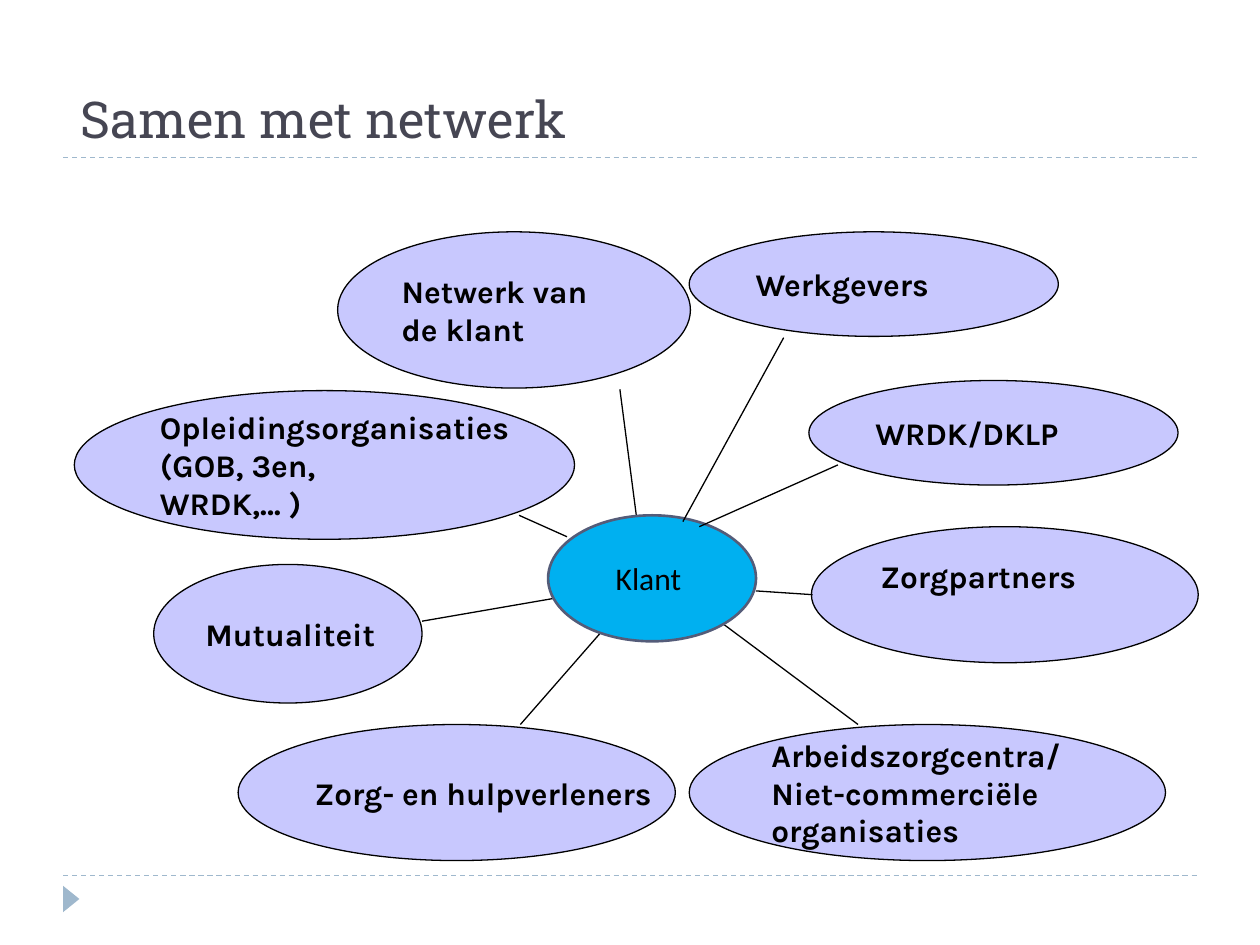
from lxml.etree import SubElement
from pptx import Presentation
from pptx.dml.color import RGBColor
from pptx.enum.dml import MSO_LINE
from pptx.enum.shapes import MSO_CONNECTOR, MSO_SHAPE
from pptx.enum.text import MSO_ANCHOR, PP_ALIGN
from pptx.oxml.ns import qn
from pptx.util import Inches, Pt

BLACK = RGBColor(0x00, 0x00, 0x00)
TITLE_GREY = RGBColor(0x46, 0x46, 0x53)
MIST = RGBColor(0x9F, 0xB8, 0xCD)
LILAC = RGBColor(0xC8, 0xC8, 0xFE)
CYAN = RGBColor(0x00, 0xB0, 0xF0)
SLATE = RGBColor(0x54, 0x5C, 0x79)

TITLE = "Samen met netwerk"
CLIENT = ("Klant ", (4.35, 4.09, 1.65, 1))
# text, (left, top, width, height), bottom inset
PARTNERS = [
    ("WRDK/DKLP", (6.42, 3.02, 2.93, 0.83), 0.05),
    ("Zorg- en hulpverleners", (1.89, 5.75, 3.47, 1.08), 0.05),
    ("Zorgpartners", (6.44, 4.18, 3.07, 1.08), 0.35),
    ("Arbeidszorgcentra/\nNiet-commerciële\norganisaties", (5.47, 5.75, 3.78, 1.08), 0.05),
    ("Opleidingsorganisaties\n(GOB, 3en,\nWRDK,… )", (0.59, 3.1, 3.97, 1.18), 0.05),
    ("Mutualiteit", (1.22, 4.48, 2.13, 1.1), 0.05),
    ("Netwerk van\nde klant", (2.68, 1.84, 2.8, 1.24), 0.05),
    ("Werkgevers", (5.47, 1.84, 2.93, 0.83), 0.05),
]
# x and y of both ends
LINKS_BEHIND_CLIENT = [
    (4.12, 4.09, 4.5, 4.26),
    (5.05, 4.09, 4.92, 3.09),
    (5.71, 4.93, 6.81, 5.75),
    (4.76, 5.03, 4.13, 5.75),
    (6, 4.69, 6.45, 4.72),
    (3.35, 4.93, 4.45, 4.74),
]
LINKS_OVER_CLIENT = [(5.55, 4.18, 6.65, 3.69), (5.42, 4.14, 6.22, 2.68)]
RULE_TOPS = (6.95, 1.25)


def inches(values):
    return [Inches(value) for value in values]


def write(shape, text, font_name, size, color, bold=False, align=PP_ALIGN.LEFT):
    frame = shape.text_frame
    frame.text = text
    for para in frame.paragraphs:
        para.alignment = align
        font = para.font
        font.name, font.size, font.bold = font_name, Pt(size), bold
        font.color.rgb = color
    return frame


def add_line(page, ends, color=BLACK, dash=None):
    line = page.shapes.add_connector(MSO_CONNECTOR.STRAIGHT, *inches(ends))
    line.line.color.rgb = color
    line.line.width = Pt(0.75)
    if dash:
        line.line.dash_style = dash
    SubElement(line._element.spPr, qn("a:effectLst"))  # no shadow


def add_filled(page, kind, place, fill, outline=None, width=0.75):
    shape = page.shapes.add_shape(kind, *inches(place))
    shape.shadow.inherit = False
    shape.fill.solid()
    shape.fill.fore_color.rgb = fill
    if outline is None:
        shape.line.fill.background()
    else:
        shape.line.color.rgb = outline
        shape.line.width = Pt(width)
    return shape


def add_frame(page):
    """Dashed rules, corner marker and title."""
    for top in RULE_TOPS:
        add_line(page, (0.5, top, 9.5, top), MIST, MSO_LINE.DASH)
    marker = add_filled(page, MSO_SHAPE.ISOSCELES_TRIANGLE, (0.46, 7.07, 0.21, 0.13), MIST)
    marker.rotation = 90
    box = page.shapes.add_textbox(*inches((0.54, 0.68, 8.9, 0.55)))
    frame = write(box, TITLE, "Roboto Slab", 29, TITLE_GREY)
    frame.word_wrap = True
    frame.vertical_anchor = MSO_ANCHOR.BOTTOM


def add_network(page):
    for text, place, bottom in PARTNERS:
        oval = add_filled(page, MSO_SHAPE.OVAL, place, LILAC, BLACK)
        frame = write(oval, text, "Karla", 18, BLACK, bold=True)
        frame.word_wrap = False
        frame.vertical_anchor = MSO_ANCHOR.MIDDLE
        frame.margin_bottom = Inches(bottom)
    for ends in LINKS_BEHIND_CLIENT:
        add_line(page, ends)
    text, place = CLIENT
    oval = add_filled(page, MSO_SHAPE.OVAL, place, CYAN, SLATE, 1.5)
    frame = write(oval, text, "Calibri", 18, BLACK, align=PP_ALIGN.CENTER)
    frame.vertical_anchor = MSO_ANCHOR.MIDDLE
    for ends in LINKS_OVER_CLIENT:
        add_line(page, ends)


def main():
    deck = Presentation()
    deck.slide_width, deck.slide_height = Inches(10), Inches(7.5)
    page = deck.slides.add_slide(deck.slide_layouts[6])
    add_frame(page)
    add_network(page)
    deck.save("out.pptx")


if __name__ == "__main__":
    main()
